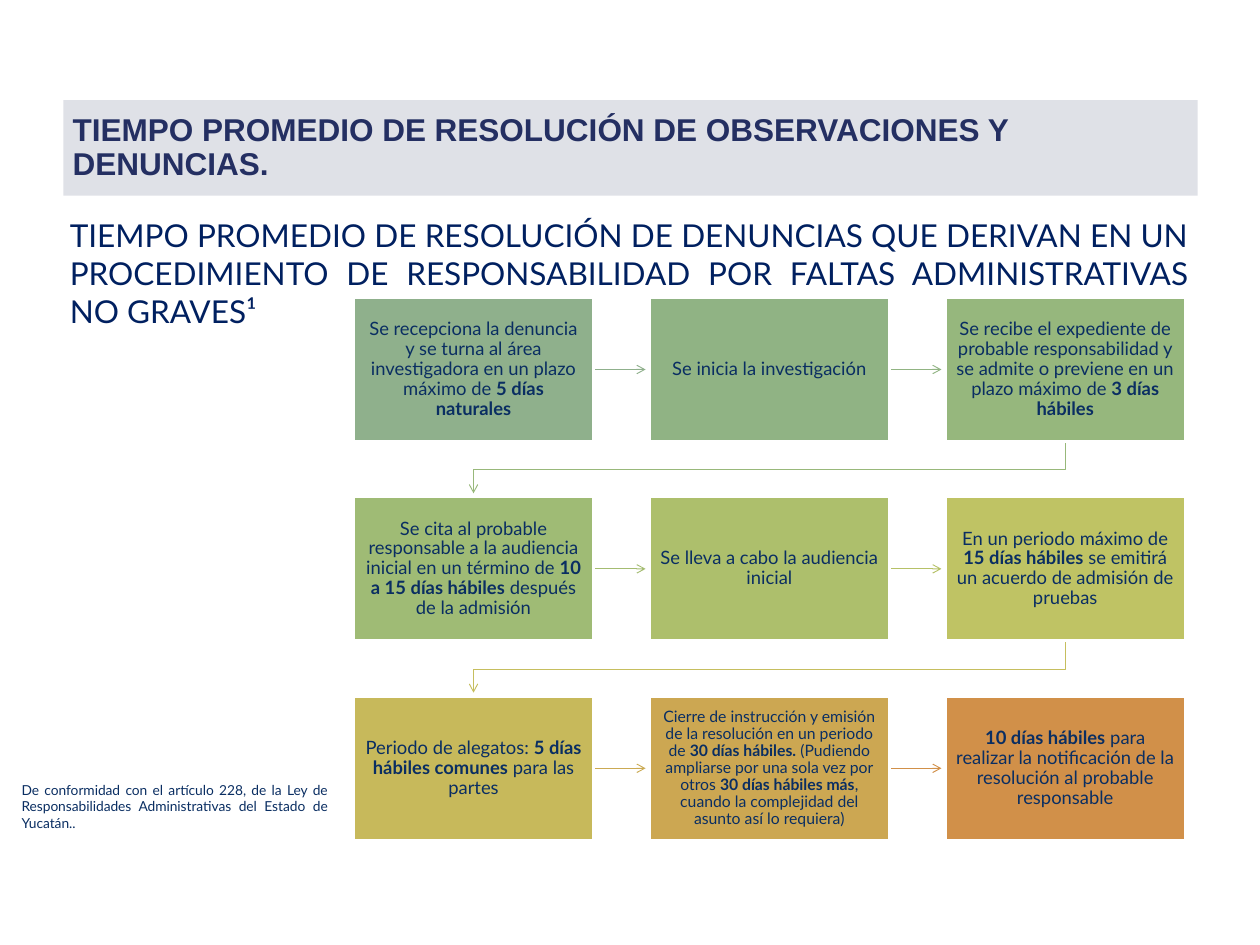
import pptx
import pptx.util
from pptx.dml.color import RGBColor
from pptx.enum.shapes import MSO_CONNECTOR, MSO_SHAPE
from pptx.enum.text import MSO_ANCHOR, PP_ALIGN
from pptx.oxml import parse_xml
from pptx.oxml.ns import nsdecls, qn
from pptx.util import Inches, Pt

THEME = {
    "band": "DFE1E7", "white": "FFFFFF",
    "title": {"name": "Arial", "size": Pt(24), "bold": True, "color": "242F62"},
    "heading": {"name": "Lato", "size": Pt(24), "color": "002060"},
    "note": {"name": "Lato", "size": Pt(10.5), "color": "0A2E62"},
    "step": {"name": "Lato", "size": Pt(14), "color": "0A2E62"},
    "long_step": {"name": "Lato", "size": Pt(12), "color": "0A2E62"},
}


def write(sp, text, style, align, spacing=None, anchor=MSO_ANCHOR.TOP, inset=None):
    """Fill the shape with one paragraph; parts between ** are bold."""
    tf = sp.text_frame
    tf.word_wrap = True
    tf.vertical_anchor = anchor
    if inset is not None:
        for side in ("left", "top", "right", "bottom"):
            setattr(tf, "margin_" + side, Inches(inset))
    p = tf.paragraphs[0]
    p.alignment = align
    p.line_spacing = spacing
    for i, part in enumerate(text.split("**")):
        if not part:
            continue
        r = p.add_run()
        r.text = part
        for key, value in {"bold": i % 2 == 1, **style}.items():
            if key == "color":
                r.font.color.rgb = RGBColor.from_string(value)
            else:
                setattr(r.font, key, value)


def style_arrow(sp, color):
    sp.line.color.rgb = RGBColor.from_string(color)
    sp.line.width = Pt(0.75)
    spPr = sp._element.spPr
    spPr.find(qn("a:ln")).append(
        parse_xml(f'<a:tailEnd {nsdecls("a")} type="arrow"/>'))
    if spPr.find(qn("a:effectLst")) is None:
        spPr.append(parse_xml(f'<a:effectLst {nsdecls("a")}/>'))


prs = pptx.Presentation()
prs.slide_width, prs.slide_height = Inches(13.33), Inches(10)
s = prs.slides.add_slide(prs.slide_layouts[6])

band = s.shapes.add_shape(MSO_SHAPE.RECTANGLE, Inches(0.67), Inches(1.06), Inches(12), Inches(1.01))
band.shadow.inherit = False
band.fill.solid()
band.fill.fore_color.rgb = RGBColor.from_string(THEME["band"])
band.line.fill.background()
write(band, "TIEMPO PROMEDIO DE RESOLUCIÓN DE OBSERVACIONES Y DENUNCIAS.",
      THEME["title"], PP_ALIGN.LEFT, 0.9, MSO_ANCHOR.MIDDLE)

heading = s.shapes.add_textbox(Inches(0.64), Inches(2.24), Inches(12.03), Inches(1.73))
write(heading, "TIEMPO PROMEDIO DE RESOLUCIÓN DE DENUNCIAS QUE DERIVAN EN UN PROCEDIMIENTO "
      "DE RESPONSABILIDAD POR FALTAS ADMINISTRATIVAS NO GRAVES¹",
      THEME["heading"], PP_ALIGN.JUSTIFY)

note = s.shapes.add_textbox(Inches(0.13), Inches(8.22), Inches(3.44), Inches(0.63))
write(note, "De conformidad con el artículo 228, de la Ley de Responsabilidades "
      "Administrativas del Estado de Yucatán..", THEME["note"], PP_ALIGN.JUSTIFY)

# Text, box colour, colour of the arrow to the next step
steps = [
    ("Se recepciona la denuncia y se turna al área investigadora en un plazo máximo de "
     "**5 días naturales**", "8FB08C", "8FB08C"),
    ("Se inicia la investigación", "90B384", "91B483"),
    ("Se recibe el expediente de probable responsabilidad y se admite o previene en un "
     "plazo máximo de **3 días hábiles**", "96B77D", "98B87A"),
    ("Se cita al probable responsable a la audiencia inicial en un término de "
     "**10 a 15 días hábiles** después de la admisión", "9FBB75", "A4BC71"),
    ("Se lleva a cabo la audiencia inicial", "ADBF6C", "B6C167"),
    ("En un periodo máximo de **15 días hábiles** se emitirá un acuerdo de admisión de "
     "pruebas", "BFC364", "C6BE5E"),
    ("Periodo de alegatos: **5 días hábiles comunes** para las partes", "C7B95B", "CBAA53"),
    ("Cierre de instrucción y emisión de la resolución en un periodo de "
     "**30 días hábiles.** (Pudiendo ampliarse por una sola vez por otros "
     "**30 días hábiles más**, cuando la complejidad del asunto así lo requiera)",
     "CCA752", "D19049"),
    ("**10 días hábiles** para realizar la notificación de la resolución al probable "
     "responsable", "D19049", None),
]
COLS = 3
LEFT, TOP = Inches(3.74), Inches(3.15)
BOX_W, BOX_H = Inches(2.54), Inches(1.52)
STEP_X, STEP_Y = Inches(3.13), Inches(2.11)
GAP = Inches(0.04)

for i, (text, fill, arrow_color) in enumerate(steps):
    row, col = divmod(i, COLS)
    x, y = LEFT + col * STEP_X, TOP + row * STEP_Y
    arrow = None
    # Arrows come first so that the white box borders cover their ends
    if col < COLS - 1:
        mid = y + BOX_H // 2
        arrow = s.shapes.add_connector(MSO_CONNECTOR.STRAIGHT, x + BOX_W, mid, x + STEP_X - GAP, mid)
        style_arrow(arrow, arrow_color)
    elif arrow_color:
        start_x, end_x = x + BOX_W // 2, LEFT + BOX_W // 2
        bottom, turn = y + BOX_H, y + BOX_H + Inches(0.3)
        path = s.shapes.build_freeform(start_x, bottom)
        path.add_line_segments([(start_x, turn), (end_x, turn), (end_x, y + STEP_Y - GAP)], close=False)
        elbow = path.convert_to_shape()
        elbow.shadow.inherit = False
        elbow.fill.background()
        style_arrow(elbow, arrow_color)

    box = s.shapes.add_shape(MSO_SHAPE.RECTANGLE, x, y, BOX_W, BOX_H)
    box.shadow.inherit = False
    box.fill.solid()
    box.fill.fore_color.rgb = RGBColor.from_string(fill)
    box.line.color.rgb = RGBColor.from_string(THEME["white"])
    box.line.width = Pt(2)
    is_long = len(text) > 150
    write(box, text, THEME["long_step" if is_long else "step"], PP_ALIGN.CENTER, 0.9,
          MSO_ANCHOR.MIDDLE, 0.09 if is_long else 0.11)
    if arrow is not None:
        arrow.begin_connect(box, 3)

prs.save("out.pptx")
